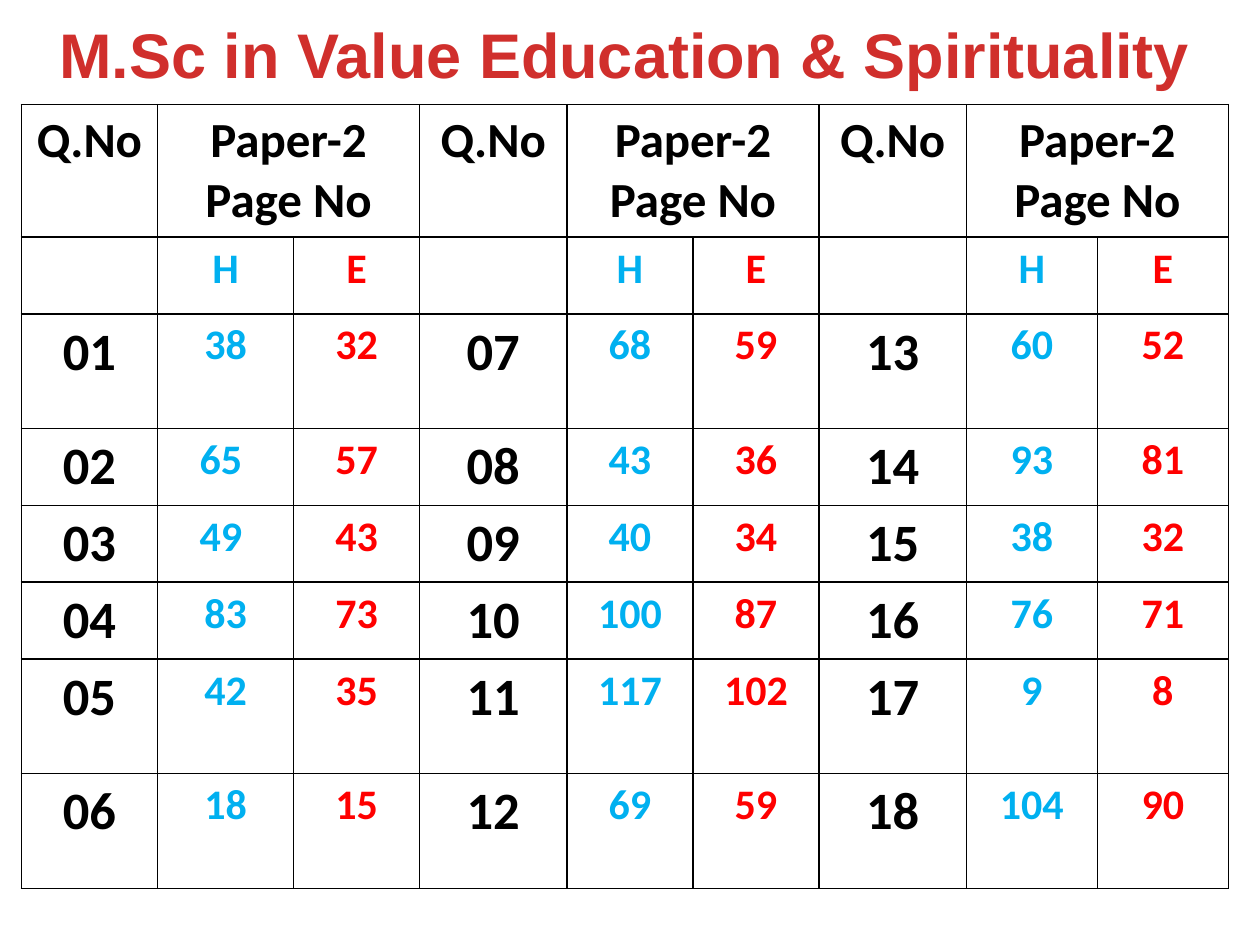
from dataclasses import dataclass

from lxml import etree
from pptx import Presentation
from pptx import util as u
from pptx.dml.color import RGBColor
from pptx.enum import text
from pptx.oxml import ns
from pptx.table import Table, _Cell
from pptx.text.text import TextFrame

COLORS = {
    "title": "D02F2C",
    "ink": "000000",
    "hindi": "00B0F0",
    "english": "FF0000",
}
COLUMN_WIDTHS = [1.08, 1.08, 1, 1.17, 1, 1, 1.17, 1.04, 1.04]
ROW_HEIGHTS = [1.05, 0.61, 0.91, 0.61, 0.61, 0.61, 0.91, 0.91]
HEADER_ROWS = 2
GROUP_WIDTH = 3


@dataclass
class PageEntry:
    hindi: str
    english: str


GROUPS = [
    [PageEntry("38", "32"), PageEntry("65 ", "57"), PageEntry("49 ", "43"),
     PageEntry("83", "73"), PageEntry("42", "35"), PageEntry("18", "15")],
    [PageEntry("68", "59"), PageEntry("43", "36"), PageEntry("40", "34"),
     PageEntry("100", "87"), PageEntry("117", "102"), PageEntry("69", "59")],
    [PageEntry("60", "52"), PageEntry("93", "81"), PageEntry("38", "32"),
     PageEntry("76", "71"), PageEntry("9", "8"), PageEntry("104", "90")],
]


def write(frame: TextFrame, content: str, *, size: float, color: str = "ink",
          font: str = "Calibri") -> None:
    frame.text = content
    for para in frame.paragraphs:
        para.alignment = text.PP_ALIGN.CENTER
        for span in para.runs:
            span.font.name = font
            span.font.size = u.Pt(size)
            span.font.bold = True
            span.font.color.rgb = RGBColor.from_string(COLORS[color])


def outline(cell: _Cell) -> None:
    properties = cell._tc.get_or_add_tcPr()
    for side in ("a:lnL", "a:lnR", "a:lnT", "a:lnB"):
        line = etree.SubElement(properties, ns.qn(side), w=str(u.Pt(1)))
        fill = etree.SubElement(line, ns.qn("a:solidFill"))
        etree.SubElement(fill, ns.qn("a:srgbClr"), val=COLORS["ink"])
    cell.fill.background()


def write_entry(table: Table, row: int, column: int, entry: PageEntry) -> None:
    write(table.cell(row, column + 1).text_frame, entry.hindi, size=24, color="hindi")
    write(table.cell(row, column + 2).text_frame, entry.english, size=24, color="english")


def fill_group(table: Table, index: int, entries: list[PageEntry]) -> None:
    column = index * GROUP_WIDTH
    heading = table.cell(0, column + 1)
    heading.merge(table.cell(0, column + 2))
    write(table.cell(0, column).text_frame, "Q.No", size=28)
    write(heading.text_frame, "Paper-2\nPage No", size=28)
    write_entry(table, 1, column, PageEntry("H", "E"))
    first_question = index * len(entries) + 1
    for offset, entry in enumerate(entries):
        row = HEADER_ROWS + offset
        write(table.cell(row, column).text_frame, f"{first_question + offset:02}", size=30)
        write_entry(table, row, column, entry)


def main() -> None:
    deck = Presentation()
    deck.slide_width, deck.slide_height = u.Inches(10), u.Inches(7.5)
    page = deck.slides.add_slide(deck.slide_layouts.get_by_name("Title Only"))

    title = page.shapes.title
    title.left, title.top = u.Inches(0.17), u.Inches(0.17)
    title.width, title.height = u.Inches(9.58), u.Inches(0.5)
    title.text_frame.vertical_anchor = text.MSO_ANCHOR.MIDDLE
    write(title.text_frame, "M.Sc in Value Education & Spirituality",
          size=36, color="title", font="Arial")

    table = page.shapes.add_table(
        len(ROW_HEIGHTS), len(COLUMN_WIDTHS), u.Inches(0.17), u.Inches(0.83),
        u.Inches(sum(COLUMN_WIDTHS)), u.Inches(sum(ROW_HEIGHTS))).table
    table.horz_banding = False
    for column, width in zip(table.columns, COLUMN_WIDTHS):
        column.width = u.Inches(width)
    for row, height in zip(table.rows, ROW_HEIGHTS):
        row.height = u.Inches(height)
    for cell in table.iter_cells():
        outline(cell)
    for index, entries in enumerate(GROUPS):
        fill_group(table, index, entries)

    deck.save("out.pptx")


if __name__ == "__main__":
    main()
